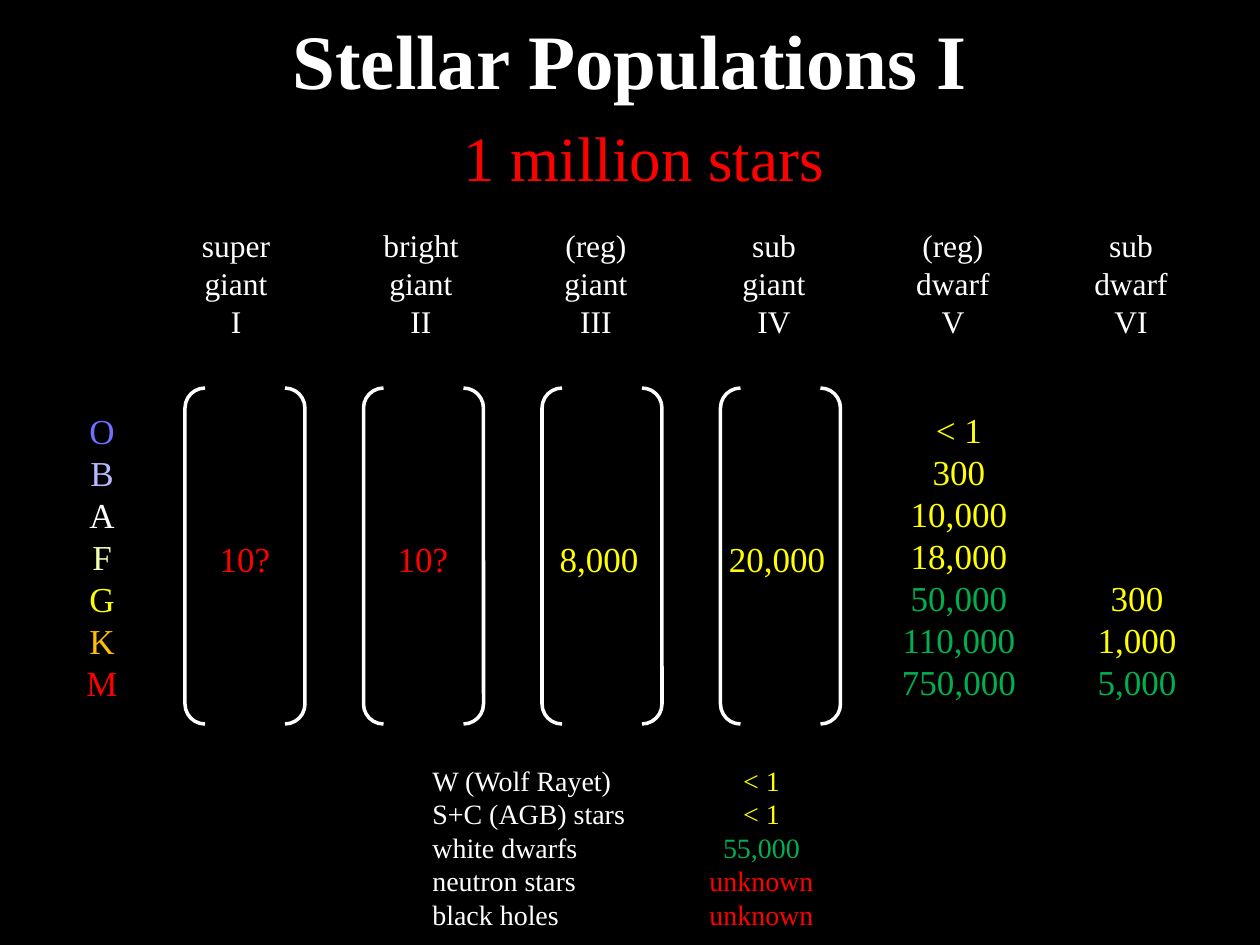
from pptx import Presentation, util as u
from pptx.dml.color import RGBColor
from pptx.enum import shapes, text
from pptx.oxml import parse_xml
from pptx.oxml.ns import nsdecls

COLORS = {
    "black": "000000", "white": "FFFFFF", "yellow": "FFFF00",
    "green": "00B050", "red": "FF0000", "blue": "7070FF",
    "pale blue": "B8B8FF", "pale yellow": "F0FFB0", "orange": "FFC000",
}
PX_PER_INCH = 126


def px(length):
    return u.Emu(round(length * 914400 / PX_PER_INCH))


def color(name):
    return RGBColor.from_string(COLORS[name])


class StarSlide:
    font = "Times New Roman"
    leading = 1.2

    def __init__(self, deck):
        self.slide = deck.slides.add_slide(deck.slide_layouts[5])
        fill = self.slide.background.fill
        fill.solid()
        fill.fore_color.rgb = color("black")

    def add_lines(self, frame, lines, size, align=text.PP_ALIGN.CENTER, tab=None, bold=False):
        """Fill a frame; each line is a list of (wording, colour name) spans."""
        for index, spans in enumerate(lines):
            para = frame.paragraphs[0] if index == 0 else frame.add_paragraph()
            if tab:
                para._p.get_or_add_pPr().append(parse_xml(
                    f'<a:tabLst {nsdecls("a")}><a:tab pos="{px(tab)}" algn="ctr"/></a:tabLst>'))
            para.alignment = align
            para.line_spacing = u.Pt(size * self.leading)
            para.space_before = u.Pt(0)
            for wording, name in spans:
                span = para.add_run()
                span.text = wording
                span.font.name = self.font
                span.font.size = u.Pt(size)
                span.font.bold = bold
                span.font.color.rgb = color(name)

    def title(self, wording, left, top, width, height):
        box = self.slide.shapes.title
        box.left, box.top, box.width, box.height = map(px, (left, top, width, height))
        box.text_frame.vertical_anchor = text.MSO_ANCHOR.MIDDLE
        self.add_lines(box.text_frame, [[(wording, "white")]], 44, bold=True)

    def text_box(self, left, top, width, height, lines, size,
                 anchor=text.MSO_ANCHOR.TOP, wrap=False, **style):
        box = self.slide.shapes.add_textbox(*map(px, (left, top, width, height)))
        box.text_frame.word_wrap = wrap
        box.text_frame.vertical_anchor = anchor
        self.add_lines(box.text_frame, lines, size, **style)

    def column(self, center, top, width, height, entries, size, **style):
        """Add a centred column with one (wording, colour name) entry a line."""
        self.text_box(center - width / 2, top, width, height,
                      [[entry] for entry in entries], size, **style)

    def brackets(self, left, top, width, height):
        shape = self.slide.shapes.add_shape(
            shapes.MSO_SHAPE.DOUBLE_BRACKET, *map(px, (left, top, width, height)))
        shape.shadow.inherit = False
        shape.fill.background()
        shape.line.color.rgb = color("white")
        shape.line.width = u.Pt(2)


CLASSES = [
    (236, 94, ("super", "giant", "I")),
    (421, 102, ("bright", "giant", "II")),
    (596, 90, ("(reg)", "giant", "III")),
    (774, 90, ("sub", "giant", "IV")),
    (953, 100, ("(reg)", "dwarf", "V")),
    (1131, 100, ("sub", "dwarf", "VI")),
]
SPECTRAL_TYPES = [
    ("O", "blue"), ("B", "pale blue"), ("A", "white"), ("F", "pale yellow"),
    ("G", "yellow"), ("K", "orange"), ("M", "red"),
]
GIANT_COUNTS = [
    (245, 77, "10?", "red"), (423, 77, "10?", "red"),
    (599, 105, "8,000", "yellow"), (777, 122, "20,000", "yellow"),
]
DWARF_COUNTS = [
    ("< 1", "yellow"), ("300", "yellow"), ("10,000", "yellow"), ("18,000", "yellow"),
    ("50,000", "green"), ("110,000", "green"), ("750,000", "green"),
]
SUBDWARF_COUNTS = [("300", "yellow"), ("1,000", "yellow"), ("5,000", "green")]
SPECIAL_STARS = [
    ("W (Wolf Rayet)", "< 1", "yellow"),
    ("S+C (AGB) stars", "< 1", "yellow"),
    ("white dwarfs", "55,000", "green"),
    ("neutron stars", "unknown", "red"),
    ("black holes", "unknown", "red"),
]
TYPE_TOP, TYPE_HEIGHT = 402, 307


def main():
    deck = Presentation()
    deck.slide_width, deck.slide_height = px(1260), px(945)
    page = StarSlide(deck)

    page.title("Stellar Populations I", 0, 1, 1260, 116)
    page.column(644, 112, 389, 89, [("1 million stars", "red")], 36)

    for center, width, words in CLASSES:
        page.column(center, 220, width, 127, [(word, "white") for word in words], 18)

    page.column(102, TYPE_TOP + 1, 57, TYPE_HEIGHT, SPECTRAL_TYPES, 20)
    for index, (center, width, count, name) in enumerate(GIANT_COUNTS):
        page.brackets(185 + 178.5 * index, 388, 120, 336)
        page.column(center, 531, width, 55, [(count, name)], 20)
    page.column(959, TYPE_TOP, 140, TYPE_HEIGHT, DWARF_COUNTS, 20)
    page.column(1137, TYPE_TOP, 105, TYPE_HEIGHT, SUBDWARF_COUNTS, 20,
                anchor=text.MSO_ANCHOR.BOTTOM)

    special_lines = [[(kind + "\t", "white"), (count, name)]
                     for kind, count, name in SPECIAL_STARS]
    page.text_box(420, 757, 483, 183, special_lines, 16, wrap=True,
                  align=text.PP_ALIGN.LEFT, tab=329)

    deck.save("out.pptx")


if __name__ == "__main__":
    main()
